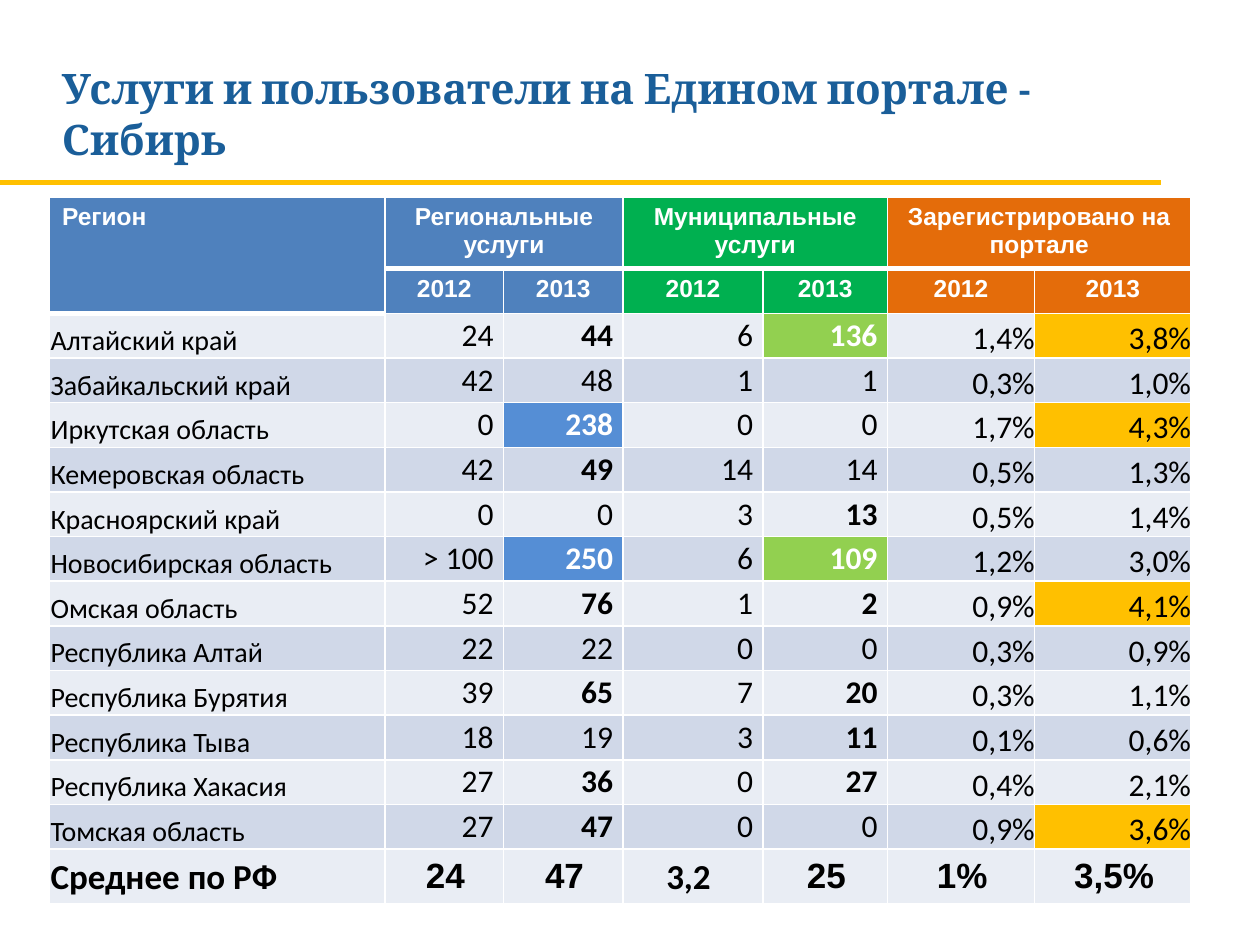
from dataclasses import dataclass
from typing import Optional

import pptx
import pptx.dml.color
import pptx.enum.shapes
import pptx.enum.text
import pptx.oxml
import pptx.oxml.ns
import pptx.util
from lxml import etree

Cm = pptx.util.Cm
Pt = pptx.util.Pt
RGB = pptx.dml.color.RGBColor.from_string
ALIGN = pptx.enum.text.PP_ALIGN
ANCHOR = pptx.enum.text.MSO_ANCHOR
qn = pptx.oxml.ns.qn


@dataclass(frozen=True)
class Theme:
    title: str = "1A5E99"
    rule: str = "FFC000"
    white: str = "FFFFFF"
    black: str = "000000"
    bands: tuple = ("E9EDF4", "D0D8E8")
    title_font: str = "Cambria"
    head_font: str = "Arial"
    body_font: str = "Calibri"
    title_size: int = 24
    head_size: int = 14
    name_size: int = 16
    value_size: int = 18
    total_size: int = 20
    grid: float = 1
    head_grid: float = 3


@dataclass(frozen=True)
class Group:
    """A pair of year columns under one heading."""
    heading: str
    fill: str
    mark_fill: str
    mark_text: str
    anchor: ANCHOR
    inset_right: float


@dataclass(frozen=True)
class Region:
    name: str
    values: tuple
    bold: tuple = ()
    marked: tuple = ()


@dataclass(frozen=True)
class Style:
    size: int
    font: str
    color: str
    fill: str
    bold: bool = False
    align: Optional[ALIGN] = None
    anchor: ANCHOR = ANCHOR.TOP
    insets: tuple = (0.25, 0.13, 0.25, 0.13)


T = Theme()
WIDTHS = (6.76, 2.39, 2.41, 2.82, 2.51, 2.97, 3.15)
HEAD_HEIGHT, ROW_HEIGHT, TOTAL_HEIGHT = 1.42, 0.9, 1.08
YEARS = ("2012", "2013")

GROUPS = (
    Group("Региональные услуги", "4F81BD", "558ED5", T.white, ANCHOR.MIDDLE, 0.2),
    Group("Муниципальные услуги", "00B050", "92D050", T.white, ANCHOR.MIDDLE, 0.2),
    Group("Зарегистрировано на портале", "E46C0A", "FFC000", T.black, ANCHOR.BOTTOM, 0),
)

# Bold and marked hold table column numbers
REGIONS = (
    Region("Алтайский край", ("24", "44", "6", "136", "1,4%", "3,8%"), (2, 4), (4, 6)),
    Region("Забайкальский край", ("42", "48", "1", "1", "0,3%", "1,0%")),
    Region("Иркутская область", ("0", "238", "0", "0", "1,7%", "4,3%"), (2,), (2, 6)),
    Region("Кемеровская область", ("42", "49", "14", "14", "0,5%", "1,3%"), (2,)),
    Region("Красноярский край", ("0", "0", "3", "13", "0,5%", "1,4%"), (4,)),
    Region("Новосибирская область", ("> 100", "250", "6", "109", "1,2%", "3,0%"), (2, 4), (2, 4)),
    Region("Омская область", ("52", "76", "1", "2", "0,9%", "4,1%"), (2, 4), (6,)),
    Region("Республика Алтай", ("22", "22", "0", "0", "0,3%", "0,9%")),
    Region("Республика Бурятия", ("39", "65", "7", "20", "0,3%", "1,1%"), (2, 4)),
    Region("Республика Тыва", ("18", "19", "3", "11", "0,1%", "0,6%"), (4,)),
    Region("Республика Хакасия", ("27", "36", "0", "27", "0,4%", "2,1%"), (2, 4)),
    Region("Томская область", ("27", "47", "0", "0", "0,9%", "3,6%"), (2,), (6,)),
)
TOTAL = ("Среднее по РФ", "24", "47", "3,2", "25", "1%", "3,5%")


def set_text(tf, text: str, size: int, font: str, color: str, bold: bool, align=None) -> None:
    tf.text = text
    p = tf.paragraphs[0]
    p.alignment = align
    r = p.runs[0]
    r.font.size, r.font.name, r.font.bold = Pt(size), font, bold
    r.font.color.rgb = RGB(color)


def edge_above(row: int, col: int) -> float:
    """Line width over a cell: heavy under headings and the region heading."""
    return T.head_grid if row == 1 or (row, col) == (2, 0) else T.grid


def add_borders(cell, row: int, col: int) -> None:
    widths = {"lnL": T.grid, "lnR": T.grid,
              "lnT": edge_above(row, col), "lnB": edge_above(row + 1, col)}
    tc_pr = cell._tc.get_or_add_tcPr()
    for tag, width in widths.items():
        ln = etree.SubElement(tc_pr, qn("a:" + tag), w=str(Pt(width)))
        fill = etree.SubElement(ln, qn("a:solidFill"))
        etree.SubElement(fill, qn("a:srgbClr"), val=T.white)


def fill_cell(cell, text: str, st: Style) -> None:
    set_text(cell.text_frame, text, st.size, st.font, st.color, st.bold, st.align)
    cell.vertical_anchor = st.anchor
    (cell.margin_left, cell.margin_top,
     cell.margin_right, cell.margin_bottom) = map(Cm, st.insets)
    cell.fill.solid()
    cell.fill.fore_color.rgb = RGB(st.fill)


def head_style(fill: str, align=None) -> Style:
    return Style(T.head_size, T.head_font, T.white, fill, True, align)


def fill_head(table) -> None:
    fill_cell(table.cell(0, 0), "Регион", head_style(GROUPS[0].fill))
    table.cell(0, 0).merge(table.cell(1, 0))
    for i, group in enumerate(GROUPS):
        first = 1 + 2 * i
        st = head_style(group.fill, ALIGN.CENTER)
        fill_cell(table.cell(0, first), group.heading, st)
        table.cell(0, first).merge(table.cell(0, first + 1))
        for j, year in enumerate(YEARS):
            fill_cell(table.cell(1, first + j), year, st)


def fill_region(table, row: int, region: Region, band: str) -> None:
    fill_cell(table.cell(row, 0), region.name,
              Style(T.name_size, T.body_font, T.black, band,
                    anchor=ANCHOR.BOTTOM, insets=(0.02, 0.02, 0.02, 0)))
    for col, value in enumerate(region.values, 1):
        group = GROUPS[(col - 1) // 2]
        marked = col in region.marked
        fill_cell(table.cell(row, col), value,
                  Style(T.value_size, T.body_font,
                        group.mark_text if marked else T.black,
                        group.mark_fill if marked else band,
                        col in region.bold, ALIGN.RIGHT, group.anchor,
                        (0, 0, group.inset_right, 0)))


def fill_total(table, row: int) -> None:
    for col, value in enumerate(TOTAL):
        tight = col in (0, 3)
        fill_cell(table.cell(row, col), value,
                  Style(T.total_size, T.body_font if tight else T.head_font,
                        T.black, T.bands[0], True,
                        ALIGN.CENTER if col else None, ANCHOR.MIDDLE,
                        (0.02, 0.02, 0.2, 0) if tight else (0.25, 0.13, 0.2, 0.13)))


def add_services_table(s) -> None:
    heights = [HEAD_HEIGHT] + [ROW_HEIGHT] * (len(REGIONS) + 1) + [TOTAL_HEIGHT]
    table = s.shapes.add_table(len(heights), len(WIDTHS), Cm(1), Cm(3.97),
                               Cm(sum(WIDTHS)), Cm(sum(heights))).table
    table.horz_banding = False
    for column, width in zip(table.columns, WIDTHS):
        column.width = Cm(width)
    for row, height in enumerate(heights):
        table.rows[row].height = Cm(height)
        for col in range(len(WIDTHS)):
            add_borders(table.cell(row, col), row, col)
    fill_head(table)
    for i, region in enumerate(REGIONS):
        fill_region(table, i + 2, region, T.bands[i % 2])
    fill_total(table, len(heights) - 1)


def main() -> None:
    prs = pptx.Presentation()
    prs.slide_width, prs.slide_height = Cm(25.4), Cm(19.05)
    s = prs.slides.add_slide(prs.slide_layouts[6])

    # Title
    tf = s.shapes.add_textbox(Cm(1), Cm(1.14), Cm(22.4), Cm(2.31)).text_frame
    tf.word_wrap = True
    set_text(tf, "Услуги и пользователи на Едином портале - Сибирь",
             T.title_size, T.title_font, T.title, True)

    # Rule under the title
    rule = s.shapes.add_connector(pptx.enum.shapes.MSO_CONNECTOR.STRAIGHT,
                                  Cm(0), Cm(3.68), Cm(23.4), Cm(3.68))
    rule.line.color.rgb = RGB(T.rule)
    rule.line.width = Pt(2.5)
    etree.SubElement(rule._element.spPr, qn("a:effectLst"))

    # Services and users by region
    add_services_table(s)
    prs.save("out.pptx")


if __name__ == "__main__":
    main()
